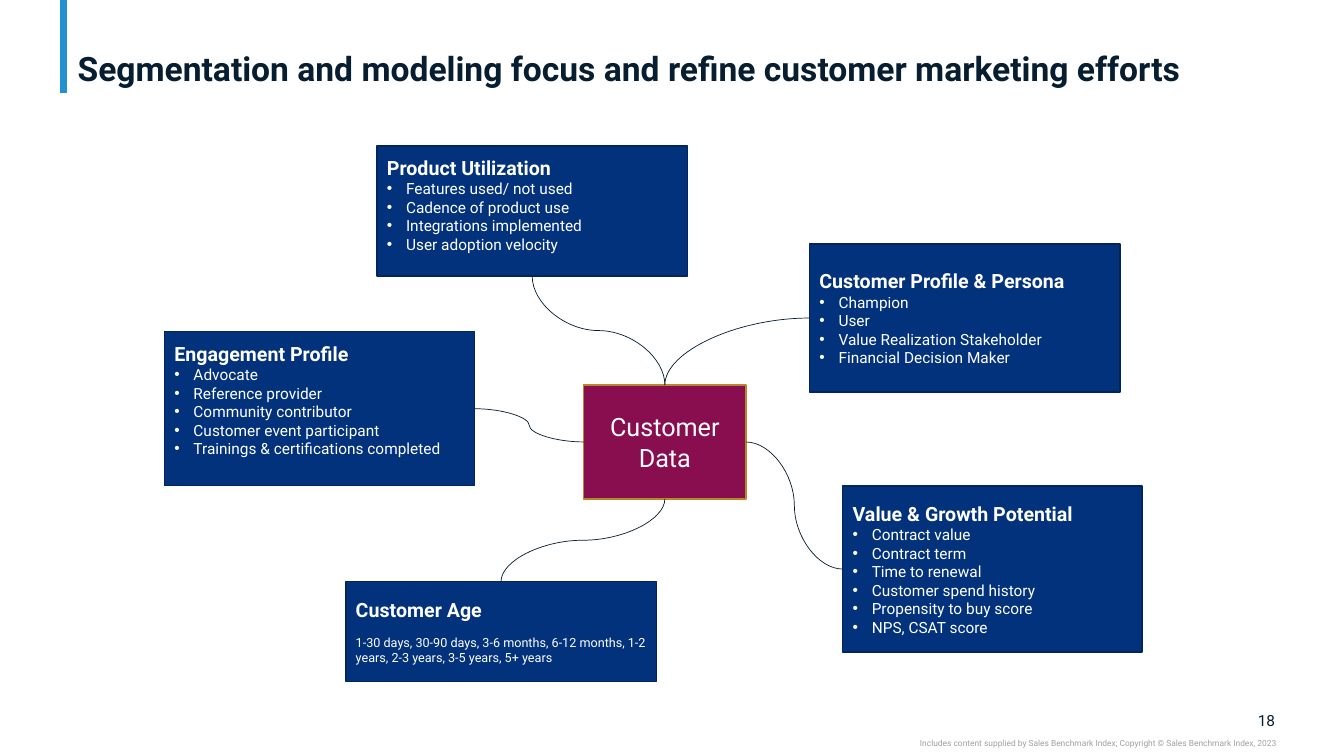
from dataclasses import dataclass
from typing import Any

import lxml.etree
import pptx
import pptx.dml.color
import pptx.enum.shapes
import pptx.enum.text
import pptx.oxml.ns
import pptx.util

SLIDE_WIDTH = pptx.util.Inches(13.333)
SLIDE_HEIGHT = pptx.util.Inches(7.5)
FONT = "Roboto"
INK, WHITE, GRAY, ACCENT = "071E31", "FFFFFF", "A0A0A0", "2391CF"
NAVY, NAVY_EDGE, WINE, GOLD = "03327C", "02255C", "880E4F", "B78729"
TOP, LEFT, BOTTOM, RIGHT = range(4)  # connection sites of a rectangle
ALIGN = pptx.enum.text.PP_ALIGN
ANCHOR = pptx.enum.text.MSO_ANCHOR
CONNECTOR = pptx.enum.shapes.MSO_CONNECTOR

HEADING = {"size": pptx.util.Pt(14), "bold": True}
BULLET = {"size": pptx.util.Pt(11), "bold": False}
NOTE = {"size": pptx.util.Pt(9), "bold": False}
HUB = {"size": pptx.util.Pt(18), "bold": False}
TITLE = {"size": pptx.util.Pt(24), "bold": True}
PAGE_NUMBER = {"size": pptx.util.Pt(11), "bold": False}
COPYRIGHT = {"size": pptx.util.Pt(6), "bold": False}
NO_MARGINS = {"margin_left": 0, "margin_right": 0, "margin_top": 0, "margin_bottom": 0}


@dataclass(frozen=True)
class Area:
    """A rectangle in percent of the slide's width and height."""
    left: float
    top: float
    width: float
    height: float

    def lengths(self) -> dict[str, int]:
        return {
            "left": across(self.left), "top": down(self.top),
            "width": across(self.width), "height": down(self.height),
        }


@dataclass(frozen=True)
class Topic:
    heading: str
    area: Area
    hub_site: int
    topic_site: int
    bullets: tuple[str, ...] = ()
    note: str = ""
    bottom_margin: float = 0.05
    geometry: str = "curvedConnector3"


TOPICS = (
    Topic("Customer Age", Area(25.73, 76.93, 23.1, 13.2), BOTTOM, TOP,
          note="1-30 days, 30-90 days, 3-6 months, 6-12 months, 1-2 years, "
               "2-3 years, 3-5 years, 5+ years"),
    Topic("Product Utilization", Area(28.05, 19.33, 23.1, 17.2), TOP, BOTTOM,
          ("Features used/ not used", "Cadence of product use",
           "Integrations implemented", "User adoption velocity"),
          bottom_margin=0.18),
    Topic("Customer Profile & Persona", Area(60.23, 32.27, 23.1, 19.6), TOP, LEFT,
          ("Champion", "User", "Value Realization Stakeholder",
           "Financial Decision Maker"),
          geometry="curvedConnector2"),
    Topic("Value & Growth Potential", Area(62.7, 64.27, 22.28, 22), RIGHT, LEFT,
          ("Contract value", "Contract term", "Time to renewal",
           "Customer spend history", "Propensity to buy score", "NPS, CSAT score")),
    Topic("Engagement Profile", Area(12.23, 43.87, 23.1, 20.4), LEFT, RIGHT,
          ("Advocate", "Reference provider", "Community contributor",
           "Customer event participant", "Trainings & certifications completed"),
          bottom_margin=0.23),
)


def across(percent: float) -> int:
    return round(SLIDE_WIDTH * percent / 100)


def down(percent: float) -> int:
    return round(SLIDE_HEIGHT * percent / 100)


def color(hex_value: str) -> pptx.dml.color.RGBColor:
    return pptx.dml.color.RGBColor.from_string(hex_value)


def apply_format(target: Any, values: dict[str, Any]) -> None:
    for name, value in values.items():
        setattr(target, name, value)


def write(paragraph: Any, text: str, font: dict[str, Any], hex_value: str,
          alignment: Any = ALIGN.LEFT) -> None:
    paragraph.text = text
    paragraph.alignment = alignment
    apply_format(paragraph.font, {"name": FONT, **font})
    paragraph.font.color.rgb = color(hex_value)


def add_bullet(paragraph: Any) -> None:
    properties = paragraph._p.get_or_add_pPr()
    indent = pptx.util.Inches(0.19)
    properties.set("marL", str(indent))
    properties.set("indent", str(-indent))
    for tag, name, value in (("a:buFont", "typeface", "Arial"), ("a:buChar", "char", "•")):
        element = lxml.etree.SubElement(properties, pptx.oxml.ns.qn(tag))
        element.set(name, value)


def add_box(slide: Any, area: Area, fill: str, edge: str) -> Any:
    box = slide.shapes.add_shape(
        pptx.enum.shapes.MSO_SHAPE.RECTANGLE, **area.lengths())
    box.shadow.inherit = False
    box.fill.solid()
    box.fill.fore_color.rgb = color(fill)
    box.line.color.rgb = color(edge)
    box.line.width = pptx.util.Pt(1)
    apply_format(box.text_frame, {"word_wrap": True, "vertical_anchor": ANCHOR.MIDDLE})
    return box


def add_topic(slide: Any, topic: Topic) -> Any:
    box = add_box(slide, topic.area, NAVY, NAVY_EDGE)
    frame = box.text_frame
    frame.margin_bottom = pptx.util.Inches(topic.bottom_margin)
    write(frame.paragraphs[0], topic.heading, HEADING, WHITE)
    for bullet in topic.bullets:
        paragraph = frame.add_paragraph()
        add_bullet(paragraph)
        write(paragraph, bullet, BULLET, WHITE)
    if topic.note:
        paragraph = frame.add_paragraph()
        write(paragraph, topic.note, NOTE, WHITE)
        paragraph.space_before = pptx.util.Pt(9.4)
    return box


def style_line(line: Any, hex_value: str, points: float) -> None:
    line.line.color.rgb = color(hex_value)
    line.line.width = pptx.util.Pt(points)
    lxml.etree.SubElement(line._element.spPr, pptx.oxml.ns.qn("a:effectLst"))


def turn_upright(connector: Any) -> None:
    """Rotate a curve so that it leaves its start vertically."""
    run = connector.end_x - connector.begin_x
    rise = connector.end_y - connector.begin_y
    middle_x = (connector.begin_x + connector.end_x) // 2
    middle_y = (connector.begin_y + connector.end_y) // 2
    width, height = abs(rise), abs(run)
    apply_format(connector, {
        "left": middle_x - width // 2, "top": middle_y - height // 2,
        "width": width, "height": height,
    })
    transform = connector._element.spPr.find(pptx.oxml.ns.qn("a:xfrm"))
    transform.set("rot", str((90 if rise > 0 else 270) * 60000))
    transform.set("flipH", "0")
    transform.set("flipV", "1" if (run > 0) == (rise > 0) else "0")


def connect(slide: Any, hub: Any, box: Any, topic: Topic) -> None:
    connector = slide.shapes.add_connector(CONNECTOR.CURVE, 0, 0, 0, 0)
    connector.begin_connect(hub, topic.hub_site)
    connector.end_connect(box, topic.topic_site)
    geometry = connector._element.spPr.find(pptx.oxml.ns.qn("a:prstGeom"))
    geometry.set("prst", topic.geometry)
    if topic.hub_site in (TOP, BOTTOM):
        turn_upright(connector)
    style_line(connector, INK, 0.5)


def add_footer(slide: Any, area: Area, text: str, font: dict[str, Any],
               hex_value: str, anchor: Any) -> None:
    frame = slide.shapes.add_textbox(**area.lengths()).text_frame
    apply_format(frame, {**NO_MARGINS, "word_wrap": True, "vertical_anchor": anchor})
    write(frame.paragraphs[0], text, font, hex_value, ALIGN.RIGHT)


def add_title(slide: Any, text: str) -> None:
    title = slide.shapes.title
    apply_format(title, Area(5.03, 0.53, 89.93, 11.2).lengths())
    apply_format(title.text_frame, {
        "margin_top": 0, "margin_bottom": 0, "word_wrap": True,
        "auto_size": pptx.enum.text.MSO_AUTO_SIZE.NONE,
        "vertical_anchor": ANCHOR.BOTTOM,
    })
    paragraph = title.text_frame.paragraphs[0]
    write(paragraph, text, TITLE, INK)
    paragraph.line_spacing = 0.9


def main() -> None:
    presentation = pptx.Presentation()
    apply_format(presentation, {"slide_width": SLIDE_WIDTH, "slide_height": SLIDE_HEIGHT})
    slide = presentation.slides.add_slide(presentation.slide_layouts[5])
    accent = slide.shapes.add_connector(
        CONNECTOR.STRAIGHT, across(4.73), 0, across(4.73), down(12.27))
    style_line(accent, ACCENT, 5)
    add_title(slide, "Segmentation and modeling focus and refine customer marketing efforts")
    add_footer(slide, Area(92.4, 94, 2.48, 2.53), "18", PAGE_NUMBER, INK, ANCHOR.MIDDLE)
    add_footer(slide, Area(56.25, 97.6, 38.7, 1.33),
               "Includes content supplied by Sales Benchmark Index; "
               "Copyright © Sales Benchmark Index, 2023", COPYRIGHT, GRAY, ANCHOR.TOP)
    hub = add_box(slide, Area(43.43, 50.93, 12.08, 15.07), WINE, GOLD)
    write(hub.text_frame.paragraphs[0], "Customer Data", HUB, WHITE, ALIGN.CENTER)
    for topic in TOPICS:
        connect(slide, hub, add_topic(slide, topic), topic)
    presentation.save("out.pptx")


if __name__ == "__main__":
    main()
